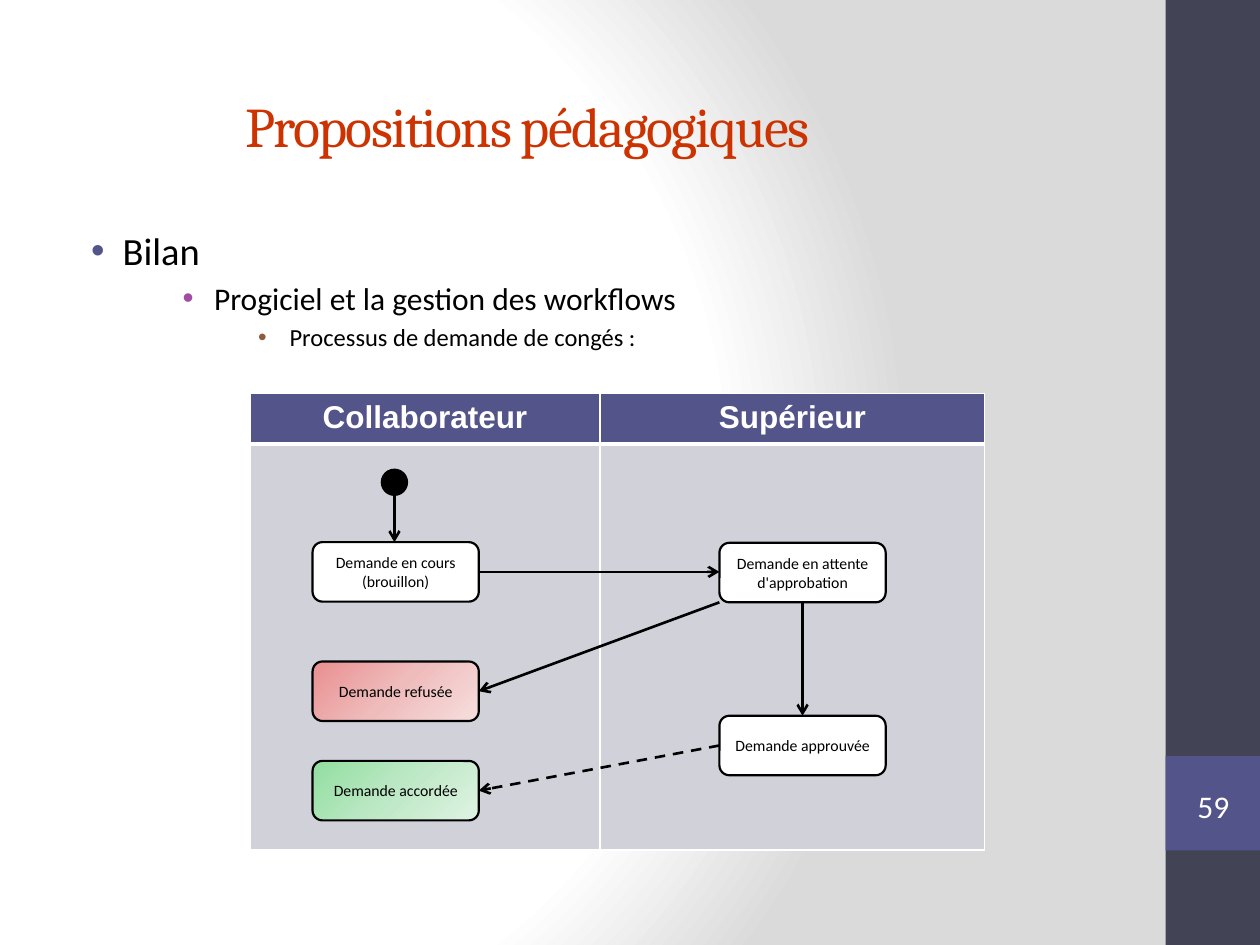
import lxml.etree
import pptx
import pptx.dml.color
import pptx.enum.dml
import pptx.enum.shapes
import pptx.enum.text
import pptx.oxml
import pptx.oxml.ns
import pptx.util

Pt = pptx.util.Pt
RGB = pptx.dml.color.RGBColor.from_string
qn = pptx.oxml.ns.qn
SHAPE = pptx.enum.shapes.MSO_SHAPE
CENTER = pptx.enum.text.PP_ALIGN.CENTER
MIDDLE = pptx.enum.text.MSO_ANCHOR.MIDDLE
NAMESPACES = pptx.oxml.ns.nsdecls("a", "p")

COLORS = {
    "white": "FFFFFF", "black": "000000", "grey": "DADADA", "side": "424456",
    "indigo": "53548A", "purple": "A04DA3", "brown": "8B5D3D",
    "title": "CC3300", "lane": "D1D1DA",
}
REFUSED = [(0, "E98F8F"), (50, "EFBCBC"), (100, "F7DEDE")]
GRANTED = [(0, "91DEA0"), (50, "BDE8C5"), (100, "DFF3E3")]


def gradient(stops, shade):
    """Return a gradFill element; shade is the XML of its direction."""
    marks = "".join(
        f'<a:gs pos="{position * 1000}"><a:srgbClr val="{color}"/></a:gs>'
        for position, color in stops)
    return pptx.oxml.parse_xml(
        f'<a:gradFill {NAMESPACES} rotWithShape="1"><a:gsLst>{marks}</a:gsLst>{shade}</a:gradFill>')


def add_block(kind, left, top, width, height, fill=None, line=None, lines=(), size=9, color="black"):
    """Add a preset shape with centred Calibri text."""
    shape = page.shapes.add_shape(kind, Pt(left), Pt(top), Pt(width), Pt(height))
    shape.shadow.inherit = False
    if fill:
        shape.fill.solid()
        shape.fill.fore_color.rgb = RGB(COLORS[fill])
    else:
        shape.fill.background()
    if line:
        shape.line.color.rgb = RGB(COLORS[line])
        shape.line.width = Pt(1.25)
    else:
        shape.line.fill.background()
    frame = shape.text_frame
    frame.margin_left = frame.margin_right = frame.margin_top = frame.margin_bottom = 0
    frame.vertical_anchor = MIDDLE
    frame.word_wrap = True
    for index, text in enumerate(lines):
        para = frame.add_paragraph() if index else frame.paragraphs[0]
        para.text = text
        para.alignment = CENTER
        para.font.name = "Calibri"
        para.font.size = Pt(size)
        para.font.color.rgb = RGB(COLORS[color])
    return shape


deck = pptx.Presentation()
deck.slide_width, deck.slide_height = Pt(720), Pt(540)
page = deck.slides.add_slide(deck.slide_layouts[6])

# Background
background = pptx.oxml.parse_xml(f"<p:bg {NAMESPACES}><p:bgPr><a:effectLst/></p:bgPr></p:bg>")
background[0].insert(0, gradient(
    [(0, COLORS["white"]), (75, COLORS["white"]), (100, COLORS["grey"])],
    '<a:path path="circle"><a:fillToRect l="20000" t="50000" r="100000" b="50000"/></a:path>'))
page._element.cSld.insert(0, background)

# Side band and page number
add_block(SHAPE.RECTANGLE, 666, 0, 54, 540, "side")
add_block(SHAPE.RECTANGLE, 666, 432, 54, 54, "indigo")
add_block(SHAPE.DOUBLE_BRACKET, 671.8, 445, 43.2, 31, lines=["59"], size=18, color="white")

# Title
box = page.shapes.add_textbox(Pt(133.2), Pt(31.7), Pt(502.6), Pt(80))
box.text_frame.word_wrap = True
box.text_frame.vertical_anchor = MIDDLE
para = box.text_frame.paragraphs[0]
span = para.add_run()
span.text = "Propositions pédagogiques"
span.font.name = "Cambria"
span.font.size = Pt(32)
span.font.color.rgb = RGB(COLORS["title"])
span.font._element.set("spc", "-100")

# Bulleted text
box = page.shapes.add_textbox(Pt(36), Pt(126), Pt(618.5), Pt(76.3))
box.text_frame.word_wrap = True
bullets = [
    ("Bilan", 0, 22, 27, "indigo"),
    ("Progiciel et la gestion des workflows", 2, 18, 79.2, "purple"),
    ("Processus de demande de congés :", 4, 14, 122.4, "brown"),
]
for index, (text, level, size, margin, bullet_color) in enumerate(bullets):
    para = box.text_frame.add_paragraph() if index else box.text_frame.paragraphs[0]
    para.text = text
    para.level = level
    para.space_before = Pt(0.2 * size)
    para.font.name = "Calibri"
    para.font.size = Pt(size)
    para.font.color.rgb = RGB(COLORS["black"])
    properties = para._p.get_or_add_pPr()
    properties.set("marL", str(Pt(margin)))
    properties.set("indent", str(Pt(-18)))
    bullet = pptx.oxml.parse_xml(
        f'<a:pPr {NAMESPACES}><a:buClr><a:srgbClr val="{COLORS[bullet_color]}"/></a:buClr>'
        '<a:buFont typeface="Arial"/><a:buChar char="•"/></a:pPr>')
    spacing = properties.find(qn("a:spcBef"))
    for element in reversed(list(bullet)):
        spacing.addnext(element)

# Swimlane table
table = page.shapes.add_table(2, 2, Pt(142.8), Pt(224.8), Pt(419.8), Pt(260)).table
for column, width in zip(table.columns, (200.2, 219.6)):
    column.width = Pt(width)
for row, height in zip(table.rows, (28, 232)):
    row.height = Pt(height)
for column, heading in enumerate(("Collaborateur", "Supérieur")):
    para = table.cell(0, column).text_frame.paragraphs[0]
    para.text = heading
    para.alignment = CENTER
    para.font.name = "Arial"
    para.font.size = Pt(18)
    para.font.bold = True
    para.font.color.rgb = RGB(COLORS["white"])
    for row, fill in enumerate(("indigo", "lane")):
        cell = table.cell(row, column)
        cell.fill.solid()
        cell.fill.fore_color.rgb = RGB(COLORS[fill])
        widths = {"lnL": 1, "lnR": 1, "lnT": 3 if row else 1, "lnB": 1 if row else 3}
        for index, (side, width) in enumerate(widths.items()):
            cell._tc.get_or_add_tcPr().insert(index, pptx.oxml.parse_xml(
                f'<a:{side} {NAMESPACES} w="{Pt(width)}"><a:solidFill>'
                f'<a:srgbClr val="{COLORS["white"]}"/></a:solidFill></a:{side}>'))

# Workflow states
STATE_WIDTH, STATE_HEIGHT = 95, 34
EMPLOYEE, MANAGER = 178.6, 411.1
DRAFT, PENDING, REFUSAL, GRANT, APPROVAL = 309.8, 310.2, 378, 434.8, 409
states = [
    (EMPLOYEE, DRAFT, ["Demande en cours", "(brouillon)"], None),
    (MANAGER, PENDING, ["Demande en attente d'approbation"], None),
    (EMPLOYEE, REFUSAL, ["Demande refusée"], REFUSED),
    (EMPLOYEE, GRANT, ["Demande accordée"], GRANTED),
    (MANAGER, APPROVAL, ["Demande approuvée"], None),
]
for left, top, lines, stops in states:
    state = add_block(SHAPE.ROUNDED_RECTANGLE, left, top, STATE_WIDTH, STATE_HEIGHT,
                      "white", "black", lines)
    if stops:
        solid = state._element.spPr.find(qn("a:solidFill"))
        solid.getparent().replace(solid, gradient(stops, '<a:lin ang="2700000" scaled="1"/>'))
add_block(SHAPE.OVAL, 218.2, 268.4, 14.4, 14.4, "black", "black")

# Transitions
employee_right = EMPLOYEE + STATE_WIDTH
start_x = 225.4
manager_center = MANAGER + STATE_WIDTH / 2
half = STATE_HEIGHT / 2
transitions = [
    (start_x, 281.8, start_x, DRAFT, False),
    (employee_right, DRAFT + half, MANAGER, DRAFT + half, False),
    (manager_center, PENDING + STATE_HEIGHT, manager_center, APPROVAL, False),
    (MANAGER, APPROVAL + half, employee_right, GRANT + half, True),
    (MANAGER, PENDING + STATE_HEIGHT, employee_right, REFUSAL + half, False),
]
for *ends, dashed in transitions:
    arrow = page.shapes.add_connector(
        pptx.enum.shapes.MSO_CONNECTOR.STRAIGHT, *(Pt(value) for value in ends))
    arrow.line.color.rgb = RGB(COLORS["black"])
    arrow.line.width = Pt(1.5)
    if dashed:
        arrow.line.dash_style = pptx.enum.dml.MSO_LINE.DASH
    lxml.etree.SubElement(arrow.line._get_or_add_ln(), qn("a:tailEnd"), type="arrow")
    lxml.etree.SubElement(arrow._element.spPr, qn("a:effectLst"))

deck.save("out.pptx")
